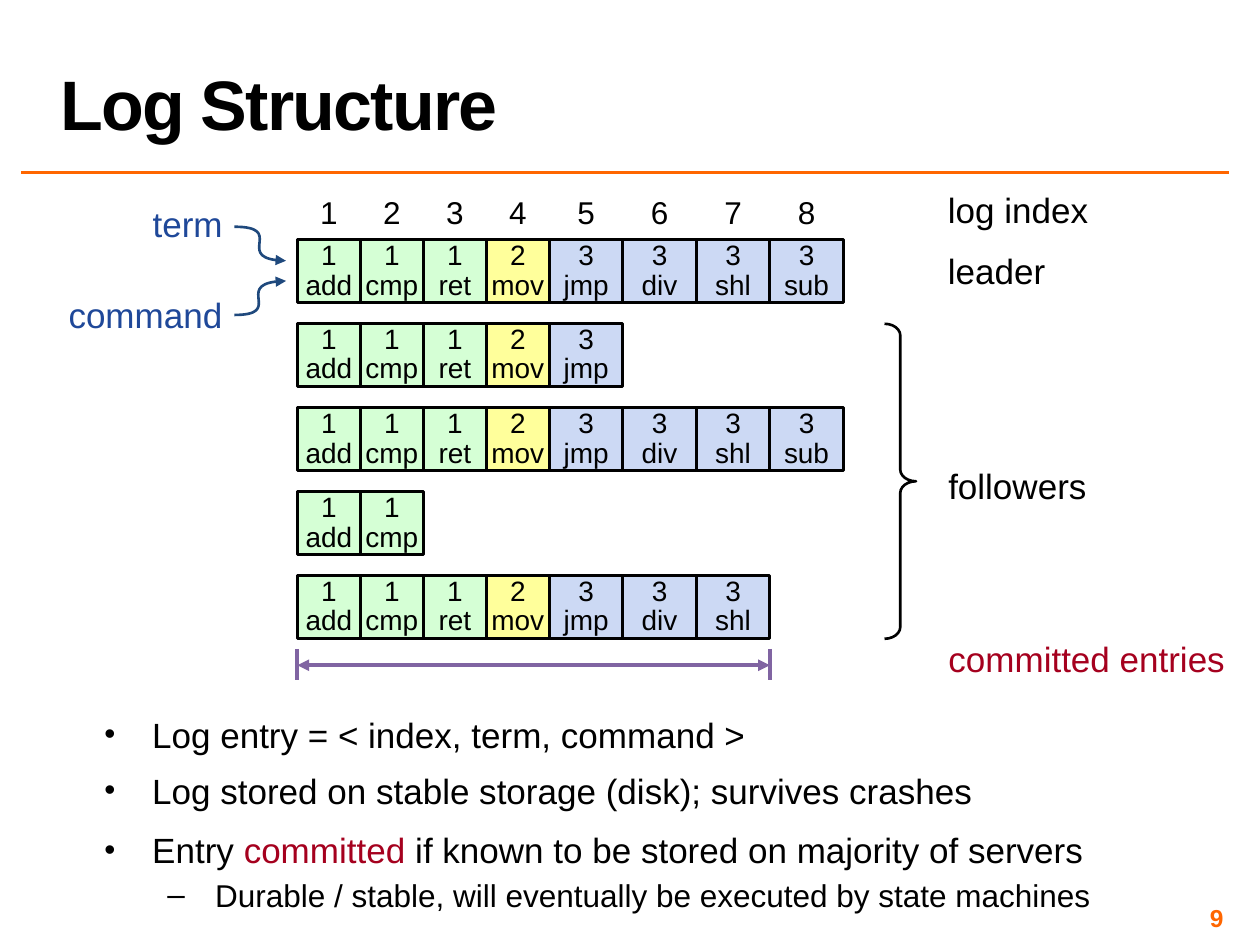
from lxml.etree import SubElement
from pptx import Presentation
from pptx.dml.color import RGBColor
from pptx.enum.shapes import MSO_CONNECTOR as Conn, MSO_SHAPE as Kind
from pptx.enum.text import MSO_ANCHOR as Anchor, PP_ALIGN as Align
from pptx.oxml.ns import qn
from pptx.util import Inches, Pt

hue = RGBColor.from_string


def write(frame, text, size=20, color="000000", bold=False, align=Align.LEFT,
          anchor=Anchor.TOP, inset=None, lead=None, wrap=True, track=None):
    frame.word_wrap = wrap
    frame.vertical_anchor = anchor
    if inset is not None:
        frame.margin_left = frame.margin_right = Inches(inset)
        frame.margin_top = frame.margin_bottom = Inches(inset)
    par = frame.paragraphs[-1]
    par.alignment = align
    par.line_spacing = lead
    for i, part in enumerate(text.split("\n")):
        if i:
            par.add_line_break()
        run = par.add_run()
        run.text = part
        run.font.name = "Arial"
        run.font.size = Pt(size)
        run.font.bold = bold
        run.font.color.rgb = hue(color)
        if track:
            run._r.get_or_add_rPr().set("spc", str(track))


def stroke(shape, color, width, *ends):
    shape.line.color.rgb = hue(color)
    shape.line.width = Pt(width)
    for end in ends:
        SubElement(shape.line._get_or_add_ln(), qn(end)).set("type", "triangle")
    SubElement(shape._element.spPr, qn("a:effectLst"))


deck = Presentation()
deck.slide_width, deck.slide_height = Inches(10), Inches(7.5)
slide = deck.slides.add_slide(deck.slide_layouts[6])
shapes = slide.shapes

rule = shapes.add_connector(
    Conn.STRAIGHT, Inches(0.17), Inches(1.37), Inches(9.75), Inches(1.37))
stroke(rule, "FF6600", 2)

page = shapes.add_textbox(Inches(7.42), Inches(7.17), Inches(2.33), Inches(0.23))
write(page.text_frame, "9", size=14, color="FF6600", bold=True,
      align=Align.RIGHT, anchor=Anchor.MIDDLE, inset=0.04)

title = shapes.add_textbox(Inches(0.38), Inches(0.02), Inches(9.37), Inches(1.17))
write(title.text_frame, "Log Structure", size=40, bold=True,
      anchor=Anchor.BOTTOM, lead=0.8, track=-100)

fills = {1: "D5FFD5", 2: "FFFF9B", 3: "CCD9F4"}
terms = [1, 1, 1, 2, 3, 3, 3, 3]
words = ["add", "cmp", "ret", "mov", "jmp", "div", "shl", "sub"]
wides = [0.5] * 4 + [7 / 12] * 4
lefts = [2.36 + sum(wides[:i]) for i in range(8)]
log = list(zip(lefts, wides, terms, words))

for i, (left, wide) in enumerate(zip(lefts, wides), 1):
    index = shapes.add_textbox(Inches(left), Inches(1.48), Inches(wide), Inches(0.4))
    write(index.text_frame, str(i), size=18, align=Align.CENTER)

for row, count in enumerate([8, 5, 8, 2, 7]):
    for left, wide, term, word in log[:count]:
        cell = shapes.add_shape(Kind.RECTANGLE, Inches(left), Inches(1.9 + row * 2 / 3),
                                Inches(wide), Inches(0.5))
        cell.fill.solid()
        cell.fill.fore_color.rgb = hue(fills[term])
        stroke(cell, "000000", 1.5)
        write(cell.text_frame, f"{term}\n{word}", size=16, align=Align.CENTER,
              anchor=Anchor.MIDDLE, inset=0, lead=Pt(17))

for text, left, top, wide, color in [
    ("log index", 7.52, 1.5, 1.12, "000000"),
    ("leader", 7.52, 1.98, 0.78, "000000"),
    ("followers", 7.52, 3.69, 1.11, "000000"),
    ("committed entries", 7.52, 5.06, 2.21, "A5001E"),
    ("term", 1.21, 1.61, 0.56, "1F4899"),
    ("command", 0.54, 2.33, 1.23, "1F4899"),
]:
    label = shapes.add_textbox(Inches(left), Inches(top), Inches(wide), Inches(0.34))
    write(label.text_frame, text, color=color, align=Align.CENTER, inset=0, wrap=False)

brace = shapes.add_shape(
    Kind.RIGHT_BRACE, Inches(7.02), Inches(2.57), Inches(0.25), Inches(2.5))
brace.adjustments[0] = 0.37
brace.fill.background()
stroke(brace, "000000", 1.5)

span = shapes.add_group_shape()
for x1, y1, x2, y2, ends in [
    (2.36, 5.15, 2.36, 5.4, []),
    (6.11, 5.15, 6.11, 5.4, []),
    (2.36, 5.28, 6.11, 5.28, ["a:headEnd", "a:tailEnd"]),
]:
    line = span.shapes.add_connector(
        Conn.STRAIGHT, Inches(x1), Inches(y1), Inches(x2), Inches(y2))
    stroke(line, "8064A2", 2.25, *ends)

for start, *rest in [
    [(1.86, 1.8), (2.26, 1.8), (1.83, 2.06), (2.27, 2.07)],
    [(1.86, 2.5), (2.25, 2.5), (1.82, 2.24), (2.27, 2.23)],
]:
    form = shapes.build_freeform(*start, scale=Inches(1))
    form = shapes.build_freeform(Inches(start[0]), Inches(start[1]))
    form.add_line_segments([(Inches(x), Inches(y)) for x, y in rest], close=False)
    curve = form.convert_to_shape()
    track = next(curve._element.iter(qn("a:path")))
    bend = SubElement(track, qn("a:cubicBezTo"))
    for step in track.findall(qn("a:lnTo")):
        bend.append(step[0])
        track.remove(step)
    curve.fill.background()
    stroke(curve, "1F497D", 1.5, "a:tailEnd")

notes = shapes.add_textbox(Inches(0.73), Inches(5.61), Inches(9), Inches(1.73)).text_frame
for i, (parts, level, size, mark, indent, before, after) in enumerate([
    (["Log entry = < index, term, command >"], 0, 20, "•", 0.38, 4, 4),
    (["Log stored on stable storage (disk); survives crashes"], 0, 20, "•", 0.38, 4, 4),
    (["Entry ", "committed", " if known to be stored on majority of servers"],
     0, 20, "•", 0.38, 6, 0),
    (["Durable / stable, will eventually be executed by state machines"],
     1, 18, "–", 0.88, 3, 0),
]):
    par = notes.add_paragraph() if i else notes.paragraphs[0]
    for part in parts:
        write(notes, part, size=size, color="A5001E" if part == "committed" else "000000")
    par.level = level
    par.space_before, par.space_after = Pt(before), Pt(after)
    props = par._p.get_or_add_pPr()
    props.set("marL", str(Inches(indent)))
    props.set("indent", str(Inches(-0.38)))
    tint = SubElement(props, qn("a:buClr"))
    SubElement(tint, qn("a:srgbClr")).set("val", "000000")
    if level == 0:
        SubElement(props, qn("a:buSzPct")).set("val", "90000")
    SubElement(props, qn("a:buFont")).set("typeface", "Arial")
    SubElement(props, qn("a:buChar")).set("char", mark)

deck.save("out.pptx")
